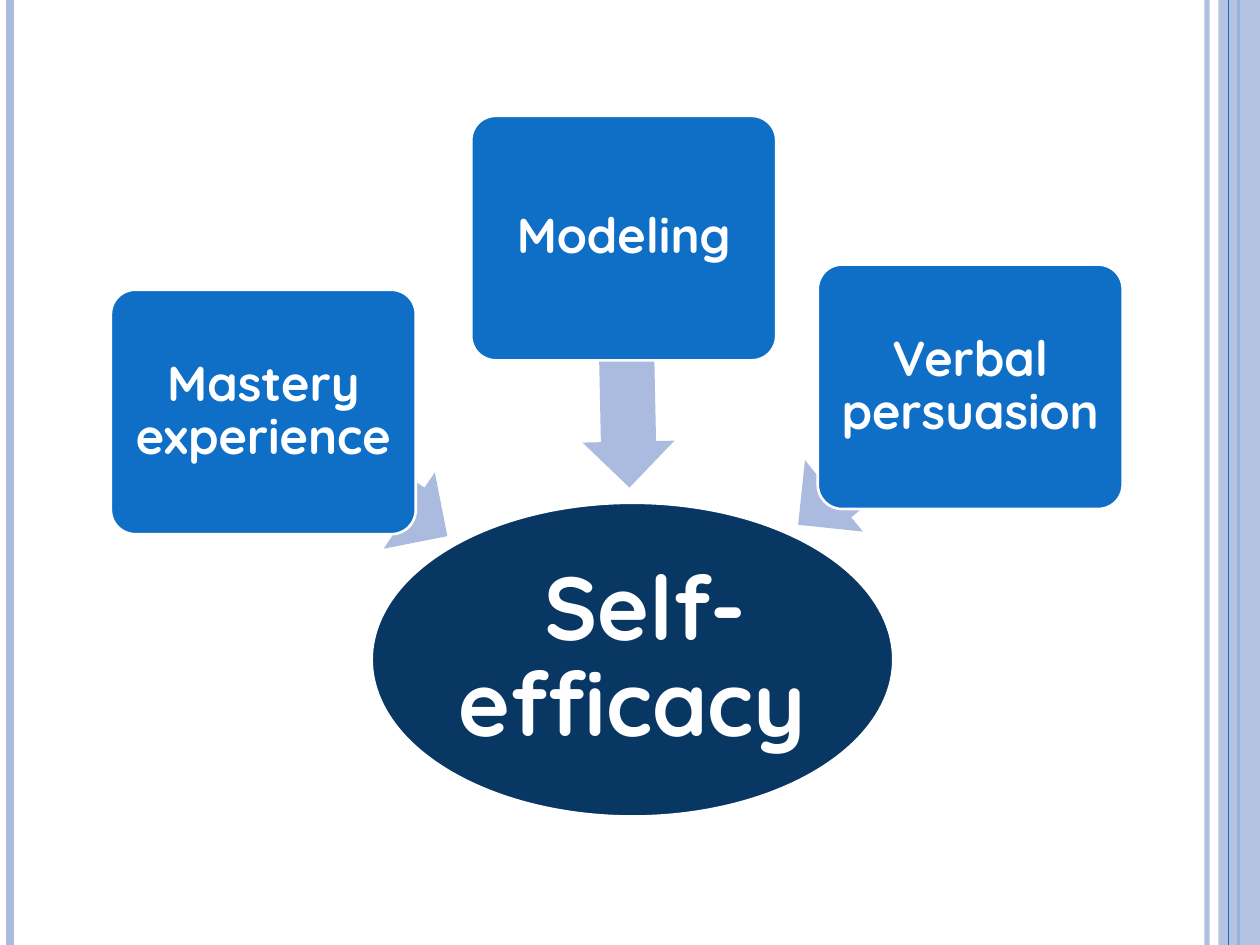
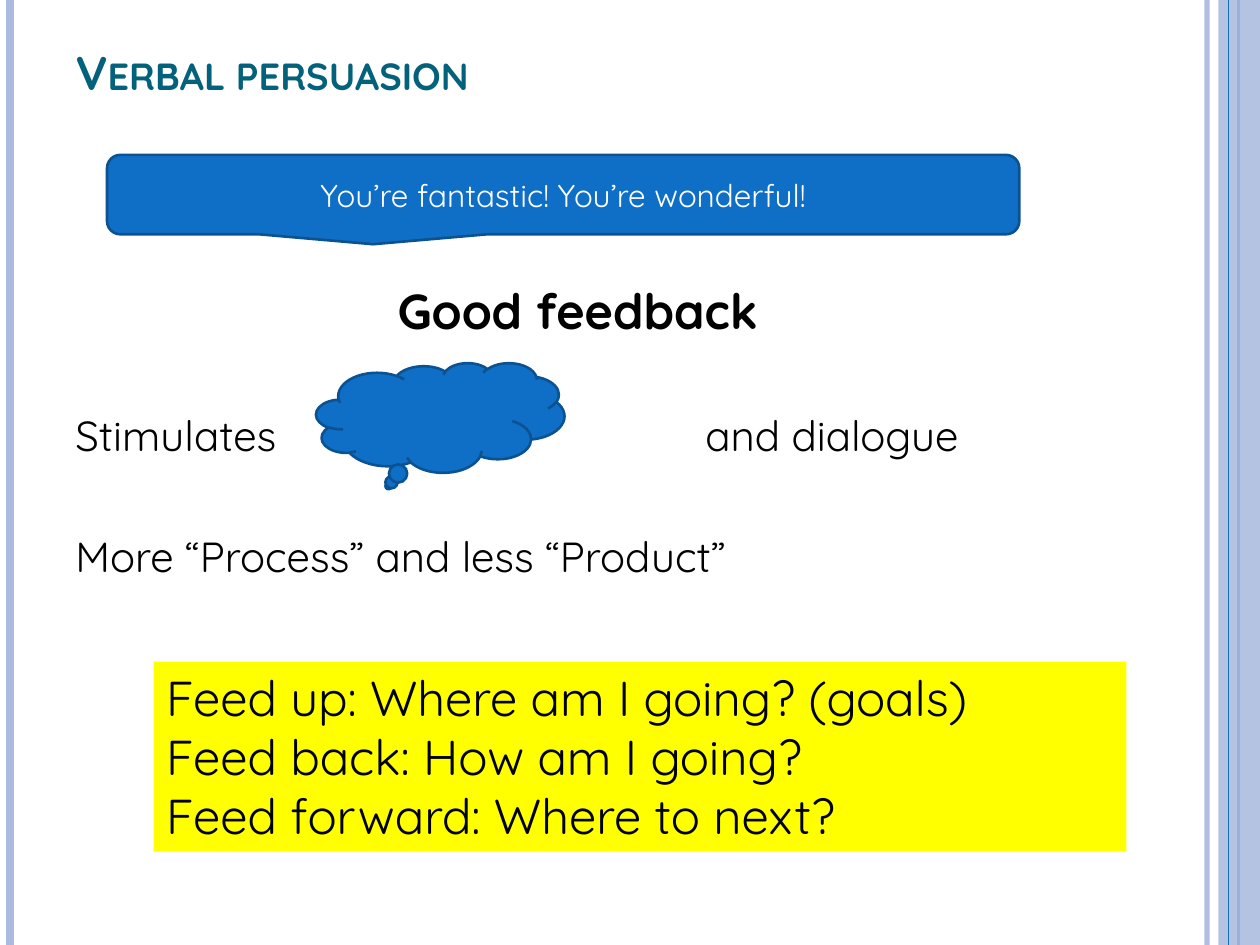
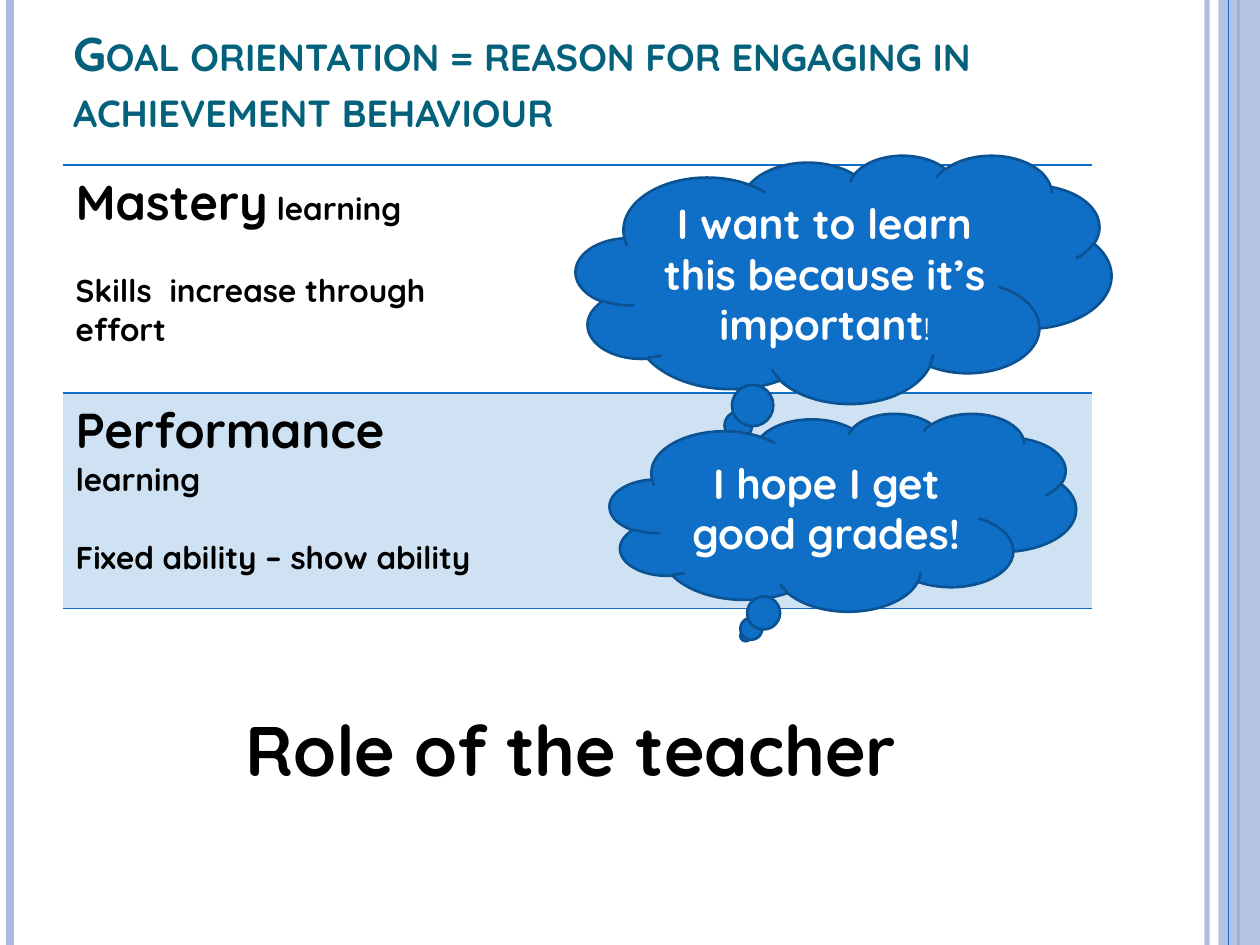
from lxml import etree
from pptx import Presentation
from pptx import util as u
from pptx.dml.color import RGBColor
from pptx.enum import shapes, text
from pptx.oxml import ns

FONT = "Quicksand"
BLUE = RGBColor(0x0F, 0x6F, 0xC6)
EDGE = RGBColor(0x0B, 0x52, 0x92)
NAVY = RGBColor(0x08, 0x37, 0x63)
TEAL = RGBColor(0x04, 0x61, 0x7B)
PALE = RGBColor(0xAB, 0xBB, 0xDF)
TINT = RGBColor(0xCF, 0xE2, 0xF4)
YELLOW = RGBColor(0xFF, 0xFF, 0x00)
WHITE = RGBColor(0xFF, 0xFF, 0xFF)
BLACK = RGBColor(0, 0, 0)
LEFT, CENTER = text.PP_ALIGN.LEFT, text.PP_ALIGN.CENTER
SHAPE = shapes.MSO_SHAPE
NO_STYLE = "{2D5ABB26-0587-4C30-8999-92F81FD0307C}"


def add_shape(s, kind, box, fill, line=None):
    sp = s.shapes.add_shape(kind, *map(u.Inches, box))
    sp.shadow.inherit = False
    sp.fill.solid()
    sp.fill.fore_color.rgb = fill
    if line is None:
        sp.line.fill.background()
    else:
        sp.line.color.rgb = line
        sp.line.width = u.Pt(1.5)
    sp.text_frame.word_wrap = True
    sp.text_frame.vertical_anchor = text.MSO_ANCHOR.MIDDLE
    return sp


def write(p, words, size, color=BLACK, bold=False, align=LEFT):
    r = p.add_run()
    r.text = words
    p.alignment = align
    p.font.name = FONT
    p.font.size = u.Pt(size)
    p.font.color.rgb = color
    p.font.bold = bold
    return r


prs = Presentation()
prs.slide_width, prs.slide_height = u.Inches(10), u.Inches(7.5)
blank, title_only = prs.slide_layouts[6], prs.slide_layouts[5]

s = prs.slides.add_slide(blank)
bands = []
for x, color, width in [(9.58, PALE, 3), (0.08, PALE, 4.5), (9.83, BLUE, 1.5), (9.75, BLUE, 0.75)]:
    c = s.shapes.add_connector(shapes.MSO_CONNECTOR.STRAIGHT, u.Inches(x), 0, u.Inches(x), u.Inches(7.5))
    c.line.color.rgb = color
    c.line.width = u.Pt(width)
    etree.SubElement(c.element.spPr, ns.qn("a:effectLst"))
    bands.append(c)
side = add_shape(s, SHAPE.RECTANGLE, (9.67, 0, 0.33, 7.5), PALE)
bands.insert(3, side)
for sp, alpha in [(bands[0], 93000), (side, 87000)]:
    clr = sp.element.spPr.find(".//" + ns.qn("a:srgbClr"))
    etree.SubElement(clr, ns.qn("a:alpha")).set("val", str(alpha))
for i, sp in enumerate(bands):
    sp.element.xpath(".//p:cNvPr")[0].set("id", str(101 + i))
    prs.slide_master.shapes.element.append(sp.element)

sp = add_shape(s, SHAPE.OVAL, (2.95, 3.99, 4.14, 2.49), NAVY, WHITE)
boxes = [(sp, " Self-efficacy", 51, 0.04)]
sources = [
    ("Mastery experience", 0.88, 2.3, (1.94, 3.4, 1.76, 0.73), 213.8),
    ("Modeling", 3.74, 0.92, (3.98, 2.51, 1.99, 0.73), 268.8),
    ("Verbal persuasion", 6.49, 2.1, (6.14, 3.25, 1.75, 0.73), 321),
]
for words, x, y, arrow, angle in sources:
    sp = add_shape(s, SHAPE.LEFT_ARROW, arrow, PALE)
    sp.adjustments[0], sp.adjustments[1] = 0.6, 0.5
    sp.rotation = angle
    sp = add_shape(s, SHAPE.ROUNDED_RECTANGLE, (x, y, 2.42, 1.94), BLUE, WHITE)
    sp.adjustments[0] = 0.1
    boxes.append((sp, words, 28, 0.06))
for sp, words, size, inset in boxes:
    tf = sp.text_frame
    tf.margin_left = tf.margin_right = tf.margin_top = tf.margin_bottom = u.Inches(inset)
    p = tf.paragraphs[0]
    p.line_spacing = 0.9
    write(p, words, size, WHITE, True, CENTER)

titles = [
    ("Verbal persuasion", (0.5, 0.3, 8.17, 0.54)),
    ("Goal orientation = reason for engaging in achievement behaviour", (0.48, 0.21, 8.17, 0.93)),
]
for words, box in titles:
    s = prs.slides.add_slide(title_only)
    sp = s.shapes.title
    sp.left, sp.top, sp.width, sp.height = map(u.Inches, box)
    tf = sp.text_frame
    tf.auto_size = text.MSO_AUTO_SIZE.NONE
    tf.vertical_anchor = text.MSO_ANCHOR.BOTTOM
    r = write(tf.paragraphs[0], words, 27, TEAL, True)
    r.font._element.set("cap", "small")

s = prs.slides[1]
tf = s.shapes.add_textbox(*map(u.Inches, (0.5, 2.18, 8.17, 2.76))).text_frame
tf.word_wrap = True
write(tf.paragraphs[0], "Good feedback", 28, bold=True, align=CENTER)
for words in ["Stimulates\tand dialogue", "More “Process” and less “Product”"]:
    p = tf.add_paragraph()
    p.space_before = u.Pt(40)
    if "\t" in words:
        tabs = etree.SubElement(p._p.get_or_add_pPr(), ns.qn("a:tabLst"))
        etree.SubElement(tabs, ns.qn("a:tab"), pos=str(u.Inches(5)), algn="l")
    write(p, words, 24)

sp = add_shape(s, SHAPE.ROUNDED_RECTANGULAR_CALLOUT, (0.85, 1.23, 7.24, 0.63), BLUE, EDGE)
write(sp.text_frame.paragraphs[0], "You’re fantastic! You’re wonderful!", 18, WHITE, align=CENTER)
add_shape(s, SHAPE.CLOUD_CALLOUT, (2.51, 2.88, 1.97, 0.87), BLUE, EDGE)

sp = s.shapes.add_textbox(*map(u.Inches, (1.22, 5.25, 7.72, 1.51)))
sp.fill.solid()
sp.fill.fore_color.rgb = YELLOW
tf = sp.text_frame
tf.word_wrap = True
questions = ["Feed up: Where am I going? (goals)", "Feed back: How am I going?", "Feed forward: Where to next?"]
for i, words in enumerate(questions):
    write(tf.add_paragraph() if i else tf.paragraphs[0], words, 28)

s = prs.slides[2]
gf = s.shapes.add_table(2, 2, *map(u.Inches, (0.5, 1.31, 8.17, 3.52)))
tbl = gf.table
tbl.first_row = tbl.horz_banding = False
gf.element.find(".//" + ns.qn("a:tableStyleId")).text = NO_STYLE
for col, width in zip(tbl.columns, (3.4, 4.77)):
    col.width = u.Inches(width)
orientations = [
    ("Mastery", "Skills  increase through effort", 1.81),
    ("Performance", "Fixed ability – show ability", 1.71),
]
for i, (name, belief, height) in enumerate(orientations):
    tbl.rows[i].height = u.Inches(height)
    tf = tbl.cell(i, 0).text_frame
    p = tf.paragraphs[0]
    write(p, name, 28, bold=True)
    r = p.add_run()
    r.text = " learning"
    r.font.size = u.Pt(18)
    p = tf.add_paragraph()
    p.space_before = u.Pt(22)
    write(p, belief, 18, bold=True)
    for cell in tbl.rows[i].cells:
        if i:
            cell.fill.solid()
            cell.fill.fore_color.rgb = TINT
        else:
            cell.fill.background()
        tcPr = cell._tc.get_or_add_tcPr()
        for tag in ("a:lnB", "a:lnT"):
            ln = etree.Element(ns.qn(tag), w=str(u.Pt(1)))
            fill = etree.SubElement(ln, ns.qn("a:solidFill"))
            etree.SubElement(fill, ns.qn("a:srgbClr"), val=str(BLUE))
            tcPr.insert(0, ln)

thoughts = [
    ("I want to learn this because it’s important", "!", (4.57, 1.23, 4.25, 1.97)),
    ("I hope I get good grades!", "", (4.84, 3.28, 3.7, 1.57)),
]
for words, tail, box in thoughts:
    p = add_shape(s, SHAPE.CLOUD_CALLOUT, box, BLUE, EDGE).text_frame.paragraphs[0]
    write(p, words, 24, WHITE, True, CENTER)
    if tail:
        r = p.add_run()
        r.text = tail
        r.font.size = u.Pt(18)
        r.font.bold = False

tf = s.shapes.add_textbox(*map(u.Inches, (1.85, 5.56, 5.67, 0.77))).text_frame
tf.word_wrap = True
write(tf.paragraphs[0], "Role of the teacher", 40, bold=True)

prs.save("out.pptx")
